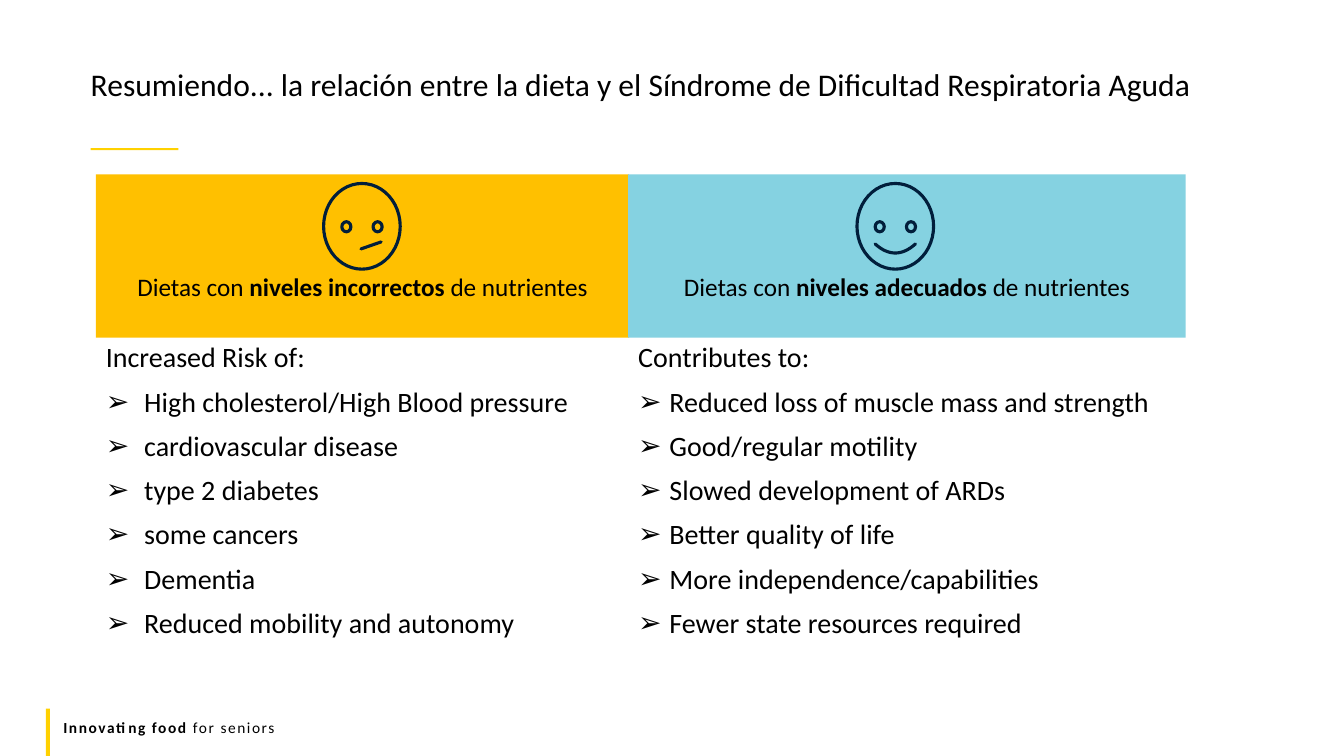
from lxml import etree
from pptx import Presentation
from pptx.dml.color import RGBColor
from pptx.enum.shapes import MSO_CONNECTOR, MSO_SHAPE
from pptx.enum.text import MSO_ANCHOR, MSO_AUTO_SIZE, PP_ALIGN
from pptx.oxml.ns import qn
from pptx.util import Inches, Pt

RECT, OVAL = MSO_SHAPE.RECTANGLE, MSO_SHAPE.OVAL
STRAIGHT = MSO_CONNECTOR.STRAIGHT
TOP, NO_FIT = MSO_ANCHOR.TOP, MSO_AUTO_SIZE.NONE
LEFT, CENTER = PP_ALIGN.LEFT, PP_ALIGN.CENTER

COLORS = {name: RGBColor.from_string(value) for name, value in {
    "text": "000000", "accent": "FFD100", "amber": "FFC000",
    "aqua": "85D2E1", "face": "011E3B"}.items()}

HEADER_TOP, HEADER_H = 1.73, 1.62
LIST_TOP, LIST_W, LIST_H = 3.36, 5.29, 3.3

# One entry per column: left, header width, colour, key words, indent, face centre, list
COLUMNS = [
    (0.95, 5.29, "amber", "niveles incorrectos ", 0.38, 3.59, [
        "Increased Risk of:", "High cholesterol/High Blood pressure",
        "cardiovascular disease", "type 2 diabetes", "some cancers",
        "Dementia", "Reduced mobility and autonomy"]),
    (6.23, 5.53, "aqua", "niveles adecuados ", 0.31, 8.88, [
        "Contributes to:", "Reduced loss of muscle mass and strength",
        "Good/regular motility", "Slowed development of ARDs",
        "Better quality of life", "More independence/capabilities",
        "Fewer state resources required"]),
]


def add_runs(p, parts, size):
    """Add (text, bold) parts to a paragraph."""
    for text, bold in parts:
        r = p.add_run()
        r.text = text
        r.font.name, r.font.size, r.font.bold = "Calibri", Pt(size), bold
        r.font.color.rgb = COLORS["text"]


def add_box(shapes, kind, x, y, w, h, fill=None):
    """Add a borderless filled shape, or an outlined one without fill."""
    sp = shapes.add_shape(kind, Inches(x), Inches(y), Inches(w), Inches(h))
    sp.shadow.inherit = False
    if fill:
        sp.fill.solid()
        sp.fill.fore_color.rgb = COLORS[fill]
        sp.line.fill.background()
    else:
        sp.fill.background()
        sp.line.color.rgb = COLORS["face"]
        sp.line.width = Pt(2.25)
    return sp


prs = Presentation()
prs.slide_width, prs.slide_height = Inches(13.33), Inches(7.5)
slide = prs.slides.add_slide(prs.slide_layouts[3])
title, *lists = slide.placeholders

# Accent rule and footer
add_box(slide.shapes, RECT, 0.9, 1.47, 0.87, 0.02, "accent")
add_box(slide.shapes, RECT, 0.455, 7.03, 0.04, 0.47, "accent")
footer = slide.shapes.add_textbox(Inches(0.53), Inches(7.07), Inches(12), Inches(0.29))
footer.text_frame.word_wrap = True
p = footer.text_frame.paragraphs[0]
add_runs(p, [("Innovating food ", True), ("for seniors", False)], 11)
for r in p.runs:
    r.font._element.set("spc", "110")

# Title
title.left, title.top = Inches(0.8), Inches(0.7)
title.width, title.height = Inches(11.59), Inches(0.64)
tf = title.text_frame
tf.vertical_anchor, tf.auto_size = TOP, NO_FIT
p = tf.paragraphs[0]
p.alignment, p.line_spacing = LEFT, 0.7
add_runs(p, [("Resumiendo... la relación entre la dieta y el Síndrome de "
              "Dificultad Respiratoria Aguda", False)], 22.5)

for body, (left, width, color, key, indent, face_x, items) in zip(lists, COLUMNS):
    # Column header
    header = add_box(slide.shapes, RECT, left, HEADER_TOP, width, HEADER_H, color)
    tf = header.text_frame
    tf.word_wrap, tf.vertical_anchor, tf.margin_top = True, TOP, Inches(0.96)
    p = tf.paragraphs[0]
    p.alignment = CENTER
    add_runs(p, [("Dietas con ", False), (key, True), ("de nutrientes", False)], 18)

    # Bulleted list
    body.left, body.top = Inches(left), Inches(LIST_TOP)
    body.width, body.height = Inches(LIST_W), Inches(LIST_H)
    tf = body.text_frame
    tf.vertical_anchor, tf.auto_size = TOP, NO_FIT
    for i, item in enumerate(items):
        p = tf.add_paragraph() if i else tf.paragraphs[0]
        pPr = p._p.get_or_add_pPr()
        step = Inches(indent) if i else 0
        pPr.set("marL", str(step))
        pPr.set("indent", str(-step))
        if i:
            etree.SubElement(pPr, qn("a:buFont"), typeface="Arial")
            etree.SubElement(pPr, qn("a:buChar"), char="➢")
        else:
            etree.SubElement(pPr, qn("a:buNone"))
        p.line_spacing, p.space_before = 0.9, Pt(10 if i else 0)
        add_runs(p, [(item, False)], 20)

    # Face: head and eyes
    face = slide.shapes.add_group_shape()
    add_box(face.shapes, OVAL, face_x - 0.38, 1.82, 0.76, 0.85)
    for side in (-1, 1):
        add_box(face.shapes, OVAL, face_x + side * 0.155 - 0.045, 2.2, 0.09, 0.1)

    # Mouth: a slanted line or a smile
    if color == "amber":
        mouth = face.shapes.add_connector(
            STRAIGHT, Inches(face_x - 0.01), Inches(2.47), Inches(face_x + 0.19), Inches(2.4))
        etree.SubElement(mouth._element.spPr, qn("a:effectLst"))
    else:
        curve = [(Inches(face_x + 0.2 * t / 8), Inches(2.51 - 0.09 * (t / 8) ** 2))
                 for t in range(-8, 9)]
        fb = face.shapes.build_freeform(*curve[0])
        fb.add_line_segments(curve[1:], close=False)
        mouth = fb.convert_to_shape()
        mouth.shadow.inherit = False
        mouth.fill.background()
    mouth.line.color.rgb = COLORS["face"]
    mouth.line.width = Pt(2.25)
    mouth._element.spPr.find(qn("a:ln")).set("cap", "rnd")

prs.save("out.pptx")
